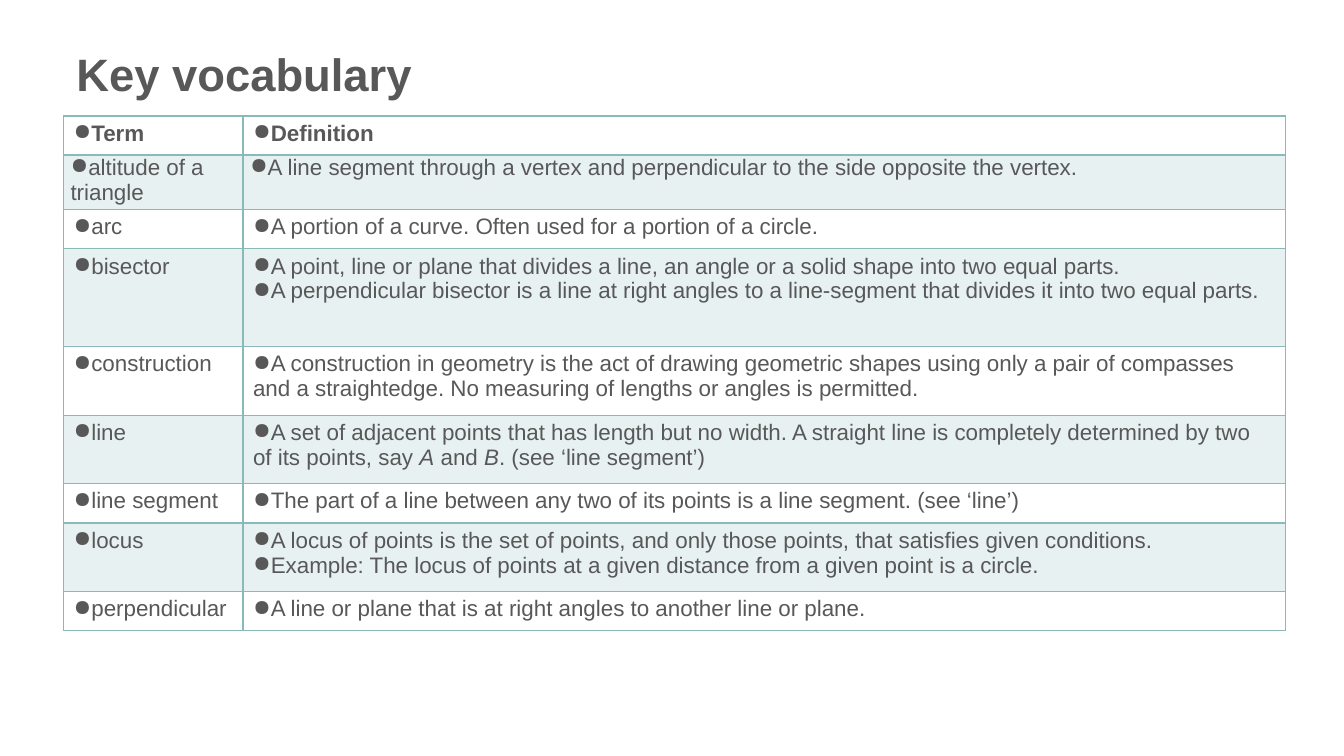
from dataclasses import dataclass

from lxml import etree
from pptx import Presentation
from pptx.dml.color import RGBColor
from pptx.enum.text import MSO_ANCHOR
from pptx.oxml.ns import qn
from pptx.util import Inches, Pt

TOP = MSO_ANCHOR.TOP


@dataclass(frozen=True)
class Theme:
    font: str = "Arial"
    text: str = "585858"
    border: str = "8AB9B9"
    band: str = "E8F1F1"
    title_size: float = 32.4
    body_size: float = 16


THEME = Theme()
COL_WIDTHS = [1.78, 10.34]

# Row height, term, definition paragraphs; *asterisks* mark italics
ROWS = [
    (0.39, "Term", ["Definition"]),
    (0.54, "altitude of a triangle",
     ["A line segment through a vertex and perpendicular to the side opposite the vertex."]),
    (0.39, "arc", ["A portion of a curve. Often used for a portion of a circle."]),
    (0.97, "bisector",
     ["A point, line or plane that divides a line, an angle or a solid shape into two equal parts.",
      "A perpendicular bisector is a line at right angles to a line-segment that divides it "
      "into two equal parts."]),
    (0.68, "construction",
     ["A construction in geometry is the act of drawing geometric shapes using only a pair of "
      "compasses and a straightedge. No measuring of lengths or angles is permitted."]),
    (0.68, "line",
     ["A set of adjacent points that has length but no width. A straight line is completely "
      "determined by two of its points, say *A* and *B*. (see ‘line segment’)"]),
    (0.39, "line segment",
     ["The part of a line between any two of its points is a line segment. (see ‘line’)"]),
    (0.68, "locus",
     ["A locus of points is the set of points, and only those points, that satisfies given "
      "conditions.",
      "Example: The locus of points at a given distance from a given point is a circle."]),
    (0.39, "perpendicular",
     ["A line or plane that is at right angles to another line or plane."]),
]


def style_paragraph(p, size, bold):
    font = p.font
    font.name = THEME.font
    font.size = Pt(size)
    font.bold = bold
    font.color.rgb = RGBColor.from_string(THEME.text)


def add_title(slide, text):
    tf = slide.shapes.add_textbox(Inches(0.66), Inches(0.47), Inches(12), Inches(1.07)).text_frame
    tf.word_wrap = True
    tf.vertical_anchor = TOP
    p = tf.paragraphs[0]
    p.line_spacing = 0.9
    style_paragraph(p, THEME.title_size, True)
    p.add_run().text = text


def add_bullet(p, text, bold):
    etree.SubElement(p._p.get_or_add_pPr(), qn("a:buChar"), char="●")
    style_paragraph(p, THEME.body_size, bold)
    for i, part in enumerate(text.split("*")):
        r = p.add_run()
        r.text = part
        if i % 2:
            r.font.italic = True


def set_borders(cell, bottom_width):
    tc_pr = cell._tc.get_or_add_tcPr()
    widths = {"a:lnL": 1, "a:lnR": 1, "a:lnT": 1, "a:lnB": bottom_width}
    for i, (tag, width) in enumerate(widths.items()):
        ln = etree.Element(qn(tag), w=str(Pt(width)))
        fill = etree.SubElement(ln, qn("a:solidFill"))
        etree.SubElement(fill, qn("a:srgbClr"), val=THEME.border)
        tc_pr.insert(i, ln)


def fill_cell(cell, paragraphs, header, banded):
    tf = cell.text_frame
    for i, text in enumerate(paragraphs):
        p = tf.add_paragraph() if i else tf.paragraphs[0]
        add_bullet(p, text, header)
    if banded:
        cell.fill.solid()
        cell.fill.fore_color.rgb = RGBColor.from_string(THEME.band)
    else:
        cell.fill.background()
    set_borders(cell, 2 if header else 1)


def add_vocabulary_table(slide):
    height = sum(row[0] for row in ROWS)
    table = slide.shapes.add_table(len(ROWS), len(COL_WIDTHS), Inches(0.63), Inches(1.15),
                                   Inches(sum(COL_WIDTHS)), Inches(height)).table
    table.horz_banding = False
    for column, width in zip(table.columns, COL_WIDTHS):
        column.width = Inches(width)
    for i, (row_height, term, definition) in enumerate(ROWS):
        table.rows[i].height = Inches(row_height)
        for j, paragraphs in enumerate([[term], definition]):
            fill_cell(table.cell(i, j), paragraphs, i == 0, i % 2 == 1)

    # The first entry sits tight in its row
    for cell in table.rows[1].cells:
        cell.margin_left = cell.margin_right = Inches(0.07)
        cell.margin_top = cell.margin_bottom = 0


def main():
    prs = Presentation()
    prs.slide_width, prs.slide_height = Inches(13.33), Inches(7.5)
    slide = prs.slides.add_slide(prs.slide_layouts[6])
    add_title(slide, "Key vocabulary")
    add_vocabulary_table(slide)
    prs.save("out.pptx")


if __name__ == "__main__":
    main()
